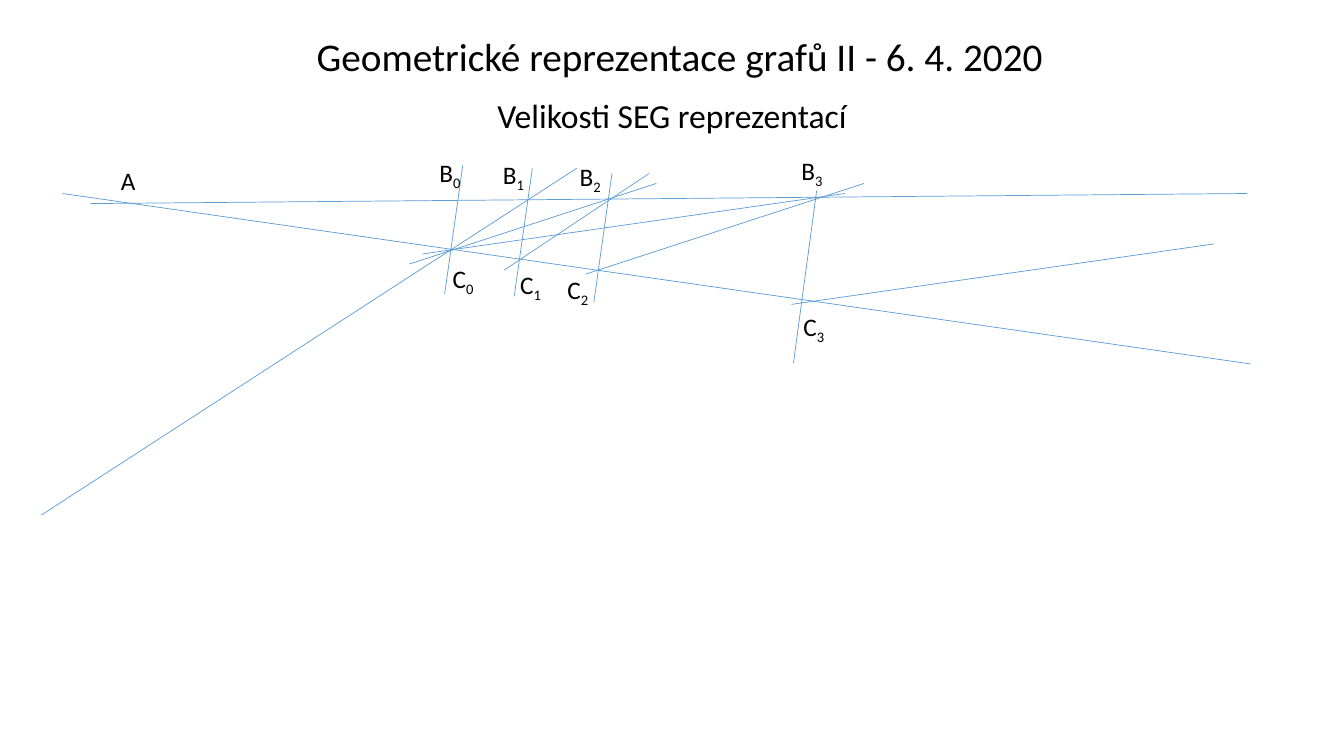
"""Build the slide on sizes of SEG representations."""
from pptx import Presentation
from pptx.dml.color import RGBColor
from pptx.enum.shapes import MSO_CONNECTOR as Link
from pptx.enum.text import MSO_ANCHOR as Anchor, MSO_AUTO_SIZE as Fit, PP_ALIGN as Align
from pptx.oxml.ns import qn
from pptx.util import Inches, Pt
from lxml.etree import SubElement

BLACK = RGBColor(0, 0, 0)
BLUE = RGBColor(0x5B, 0x9B, 0xD5)

HEADS = [
    ("Geometrické reprezentace grafů II - 6. 4. 2020", (1.74, 0.23, 10, 0.61),
     dict(size=28, anchor=Anchor.BOTTOM)),
    ("Velikosti SEG reprezentací", (0.17, 0.94, 12.99, 6.41),
     dict(size=24, before=10)),
]
LINES = [
    (0.9, 2.02, 12.37, 1.92),
    (0.62, 1.92, 12.4, 3.61),
    (4.59, 1.64, 4.41, 2.92),
    (0.41, 5.11, 5.72, 1.67),
    (5.28, 1.67, 5.1, 2.94),
    (5, 2.68, 6.44, 1.72),
    (6.07, 1.72, 5.89, 3),
    (4.06, 2.62, 6.51, 1.82),
    (5.81, 2.72, 8.57, 1.82),
    (8.1, 1.89, 7.87, 3.6),
    (4.19, 2.52, 8.38, 1.92),
    (7.85, 3.02, 12.04, 2.42),
]
LABELS = [
    ("A", "", 1.1, 1.59),
    ("B", "0", 4.26, 1.51),
    ("C", "0", 4.39, 2.56),
    ("B", "1", 4.89, 1.53),
    ("C", "1", 5.06, 2.62),
    ("B", "2", 5.65, 1.55),
    ("C", "2", 5.53, 2.67),
    ("B", "3", 7.85, 1.49),
    ("C", "3", 7.87, 3.04),
]


def add_text(slide, text, box, sub="", size=18, align=Align.LEFT,
             anchor=Anchor.TOP, wrap=False, fit=Fit.NONE, spacing=1.0, before=0):
    frame = slide.shapes.add_textbox(*map(Inches, box)).text_frame
    frame.word_wrap = wrap
    frame.auto_size = fit
    frame.vertical_anchor = anchor
    para = frame.paragraphs[0]
    para.alignment = align
    para.line_spacing = spacing
    para.space_before = Pt(before)
    for part, base in ((text, 0), (sub, -25000)):
        if part:
            run = para.add_run()
            run.text = part
            run.font.name = "Calibri"
            run.font.size = Pt(size)
            run.font.color.rgb = BLACK
            if base:
                run.font._element.set("baseline", str(base))


def add_line(slide, ends):
    line = slide.shapes.add_connector(Link.STRAIGHT, *map(Inches, ends))
    line.line.color.rgb = BLUE
    line.line.width = Pt(0.5)
    SubElement(line._element.spPr, qn("a:effectLst"))


def main():
    deck = Presentation()
    deck.slide_width, deck.slide_height = Inches(13.33), Inches(7.5)
    slide = deck.slides.add_slide(deck.slide_layouts[6])
    for text, box, style in HEADS:
        add_text(slide, text, box, align=Align.CENTER, wrap=True, spacing=0.9, **style)
    for ends in LINES:
        add_line(slide, ends)
    for name, sub, left, top in LABELS:
        width = 0.42 if sub else 0.35
        add_text(slide, name, (left, top, width, 0.4), sub=sub, fit=Fit.SHAPE_TO_FIT_TEXT)
    deck.save("out.pptx")


if __name__ == "__main__":
    main()
